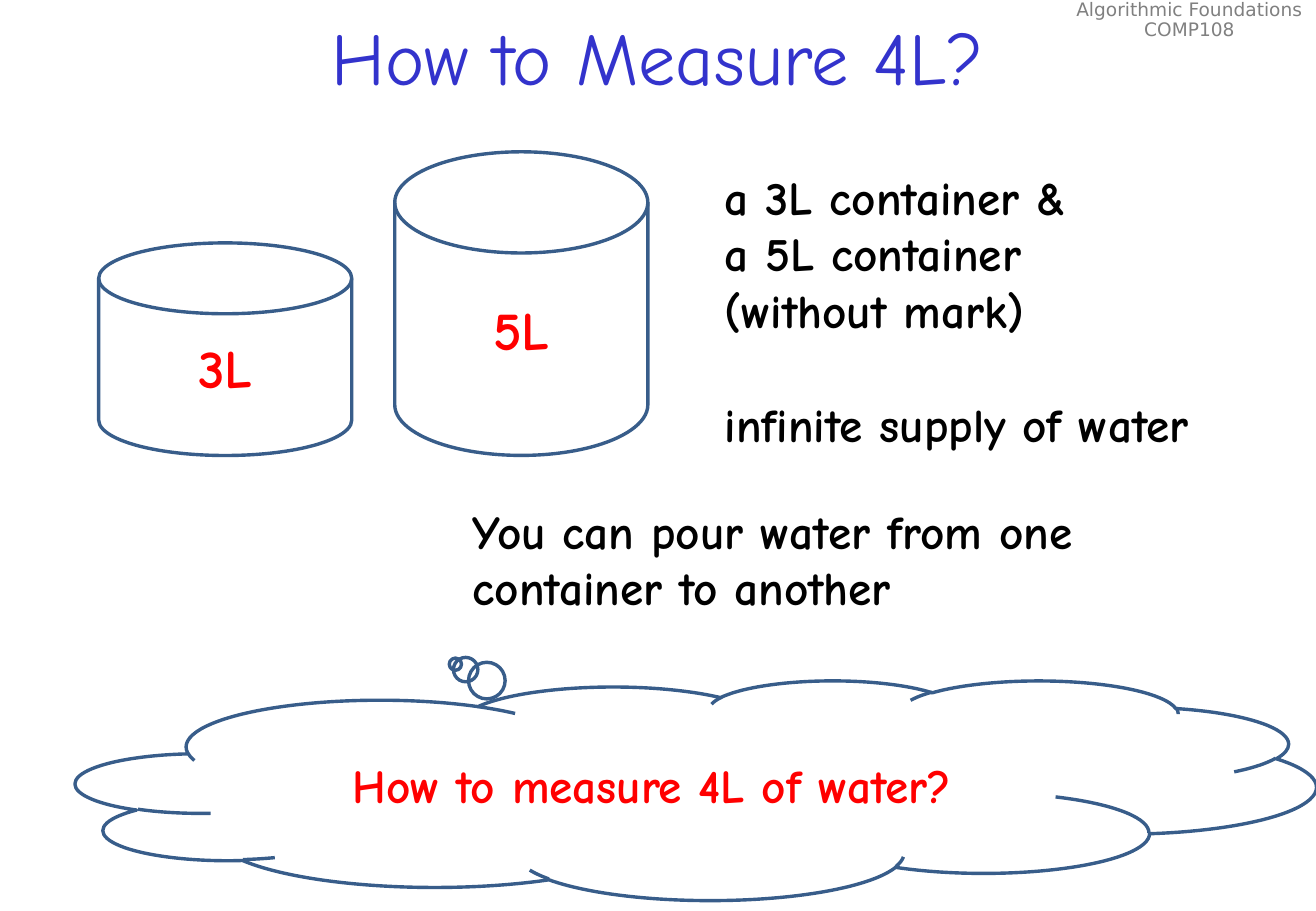
from pptx import Presentation
from pptx import util as u
from pptx.dml.color import RGBColor
from pptx.enum import shapes, text

# The slide is a grid of 26 columns by 18 rows of square cells
CELL = u.Pt(30)
COLUMNS, ROWS = 26, 18
COLORS = {"title": "3333CC", "header": "808080", "body": "000000",
          "accent": "FF0000", "outline": "385D8A"}
HAND, SANS = "Comic Neue", "DejaVu Sans"
CENTER, LEFT = text.PP_ALIGN.CENTER, text.PP_ALIGN.LEFT
MIDDLE, TOP = text.MSO_ANCHOR.MIDDLE, text.MSO_ANCHOR.TOP


def cells(*box):
    return [round(CELL * share) for share in box]


def write(frame, lines, size, color, font=HAND, bold=True,
          align=CENTER, anchor=MIDDLE):
    frame.word_wrap = True
    frame.vertical_anchor = anchor
    for number, line in enumerate(lines):
        paragraph = frame.paragraphs[0] if number == 0 else frame.add_paragraph()
        paragraph.text = line
        paragraph.alignment = align
        paragraph.font.name = font
        paragraph.font.size = u.Pt(size)
        paragraph.font.bold = bold
        paragraph.font.color.rgb = RGBColor.from_string(COLORS[color])
    return frame


def add_text(slide, box, lines, size, color, **style):
    frame = slide.shapes.add_textbox(*cells(*box)).text_frame
    return write(frame, lines, size, color, **style)


def add_outline(slide, kind, box, label, size):
    outline = slide.shapes.add_shape(kind, *cells(*box))
    outline.shadow.inherit = False
    outline.fill.background()
    outline.line.color.rgb = RGBColor.from_string(COLORS["outline"])
    outline.line.width = u.Pt(2)
    write(outline.text_frame, [label], size, "accent")
    return outline


def add_heading(slide):
    # Course name in the corner, title across the top
    course = add_text(slide, (COLUMNS - 5, -0.1, 5, 1.03),
                      ["Algorithmic Foundations", "COMP108"], 11, "header",
                      font=SANS, bold=False, anchor=TOP)
    course.word_wrap = False
    for paragraph in course.paragraphs:
        paragraph.line_spacing = 0.9
    add_text(slide, (1.3, -0.4, COLUMNS - 2.6, 3), ["How to Measure 4L?"],
             44, "title", bold=False)


def add_containers(slide, left, floor):
    # Both stand on the same floor, taller with each litre
    for position, litres in enumerate((3, 5)):
        height = 1.5 + 0.9 * litres
        add_outline(slide, shapes.MSO_SHAPE.FLOWCHART_MAGNETIC_DISK,
                    (left + position * 5.85, floor - height, 5, height),
                    f"{litres}L", 32)


def add_rules(slide):
    # What is given, and what is allowed
    given = add_text(slide, (14.08, 3.2, 11.7, 5.9),
                     ["a 3L container &", "a 5L container", "(without mark)",
                      "infinite supply of water"],
                     28, "body", align=LEFT, anchor=TOP)
    given.paragraphs[-1].space_before = u.Pt(34)
    add_text(slide, (9.1, 9.8, 16.03, 2.5),
             ["You can pour water from one container to another"],
             28, "body", align=LEFT, anchor=TOP)


def add_question(slide, box):
    # Thought cloud whose bubbles rise to the upper left
    cloud = add_outline(slide, shapes.MSO_SHAPE.CLOUD_CALLOUT, box,
                        "How to measure 4L of water?", 28)
    cloud.adjustments[0] = -0.194
    cloud.adjustments[1] = -0.573


def main():
    deck = Presentation()
    deck.slide_width, deck.slide_height = cells(COLUMNS, ROWS)
    slide = deck.slides.add_slide(deck.slide_layouts[6])
    add_heading(slide)
    add_rules(slide)
    add_question(slide, (1.5, 13.44, 24.5, 4.34))
    add_containers(slide, left=1.95, floor=9)
    deck.save("out.pptx")


if __name__ == "__main__":
    main()
